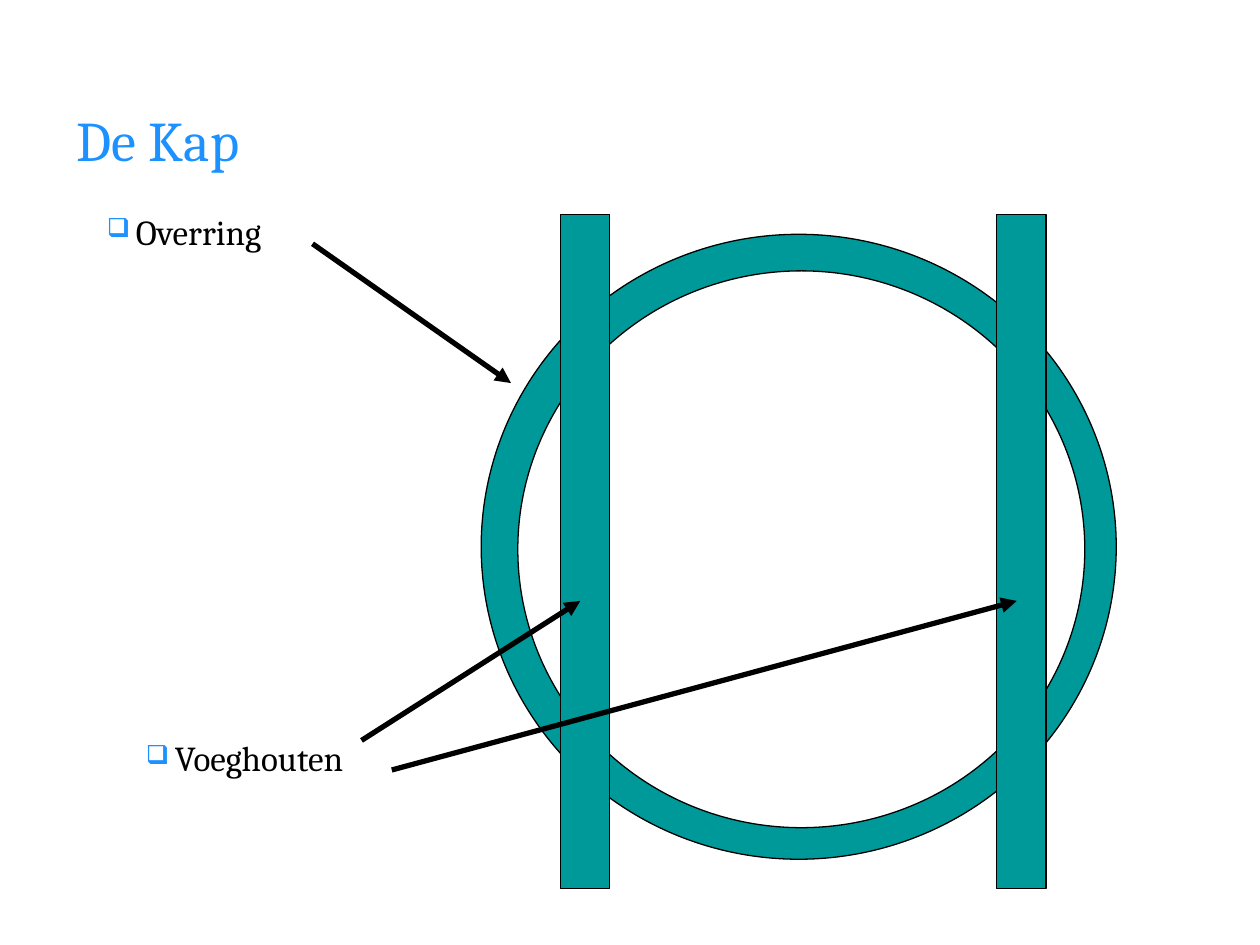
"""Build the slide that names the ring and beams of a mill cap."""
from lxml.etree import SubElement
from pptx import Presentation
from pptx.dml.color import RGBColor
from pptx.enum.shapes import MSO_CONNECTOR, MSO_SHAPE
from pptx.enum.text import MSO_ANCHOR
from pptx.oxml.ns import qn
from pptx.util import Pt

BLUE, TEAL, BLACK, WHITE = "1C91FF", "009999", "000000", "FFFFFF"
TITLE = ("De Kap", (36.7, 54.7, 590.4, 49.7))
LABELS = [
    ("Overring", (54, 116.6, 116, 41)),
    ("Voeghouten", (76.3, 417.6, 151.2, 41)),
]
RINGS = [
    ((275, 133.9, 362.9, 357.1), TEAL),
    ((295.9, 154.8, 324, 318.2), WHITE),
]
BEAM_LEFTS = [320.2, 569.5]
BEAM_TOP, BEAM_WIDTH, BEAM_HEIGHT = 122.4, 28.3, 385.2
ARROWS = [
    ((178.6, 139.3), (292, 218.9)),
    ((206.6, 423.1), (331.6, 343.4)),
    ((223.9, 440), (581, 343.4)),
]
BULLET_INDENT = 16.6


def color(value):
    return RGBColor.from_string(value)


def points(values):
    return [Pt(value) for value in values]


def add_text(slide, text, box, size, text_color, anchor):
    shape = slide.shapes.add_textbox(*points(box))
    frame = shape.text_frame
    for name, value in {"word_wrap": True, "vertical_anchor": anchor}.items():
        setattr(frame, name, value)
    paragraph = frame.paragraphs[0]
    font = paragraph.add_run().font
    paragraph.runs[0].text = text
    for name, value in {"name": "Cambria", "size": Pt(size)}.items():
        setattr(font, name, value)
    font.color.rgb = color(text_color)
    return paragraph


def add_bullet(paragraph):
    properties = paragraph._p.get_or_add_pPr()
    properties.set("marL", str(Pt(BULLET_INDENT)))
    properties.set("indent", str(-Pt(BULLET_INDENT)))
    bullet_color = SubElement(properties, qn("a:buClr"))
    SubElement(bullet_color, qn("a:srgbClr"), val=BLUE)
    SubElement(properties, qn("a:buSzPct"), val="75000")
    SubElement(properties, qn("a:buChar"), char="❑")


def add_part(slide, preset, box, fill):
    shape = slide.shapes.add_shape(preset, *points(box))
    shape.shadow.inherit = False
    shape.fill.solid()
    shape.fill.fore_color.rgb = color(fill)
    shape.line.color.rgb = color(BLACK)
    shape.line.width = Pt(0.75)


def add_arrow(slide, start, end):
    arrow = slide.shapes.add_connector(MSO_CONNECTOR.STRAIGHT, *points(start + end))
    arrow.line.color.rgb = color(BLACK)
    arrow.line.width = Pt(3)
    SubElement(arrow.line._get_or_add_ln(), qn("a:tailEnd"), type="triangle")
    SubElement(arrow._element.spPr, qn("a:effectLst"))


def main():
    presentation = Presentation()
    presentation.slide_width, presentation.slide_height = Pt(720), Pt(540)
    slide = presentation.slides.add_slide(presentation.slide_layouts[6])
    add_text(slide, *TITLE, 32, BLUE, MSO_ANCHOR.MIDDLE)
    for box, fill in RINGS:
        add_part(slide, MSO_SHAPE.OVAL, box, fill)
    for left in BEAM_LEFTS:
        box = (left, BEAM_TOP, BEAM_WIDTH, BEAM_HEIGHT)
        add_part(slide, MSO_SHAPE.RECTANGLE, box, TEAL)
    for start, end in ARROWS:
        add_arrow(slide, start, end)
    for text, box in LABELS:
        add_bullet(add_text(slide, text, box, 20, BLACK, MSO_ANCHOR.TOP))
    presentation.save("out.pptx")


if __name__ == "__main__":
    main()
